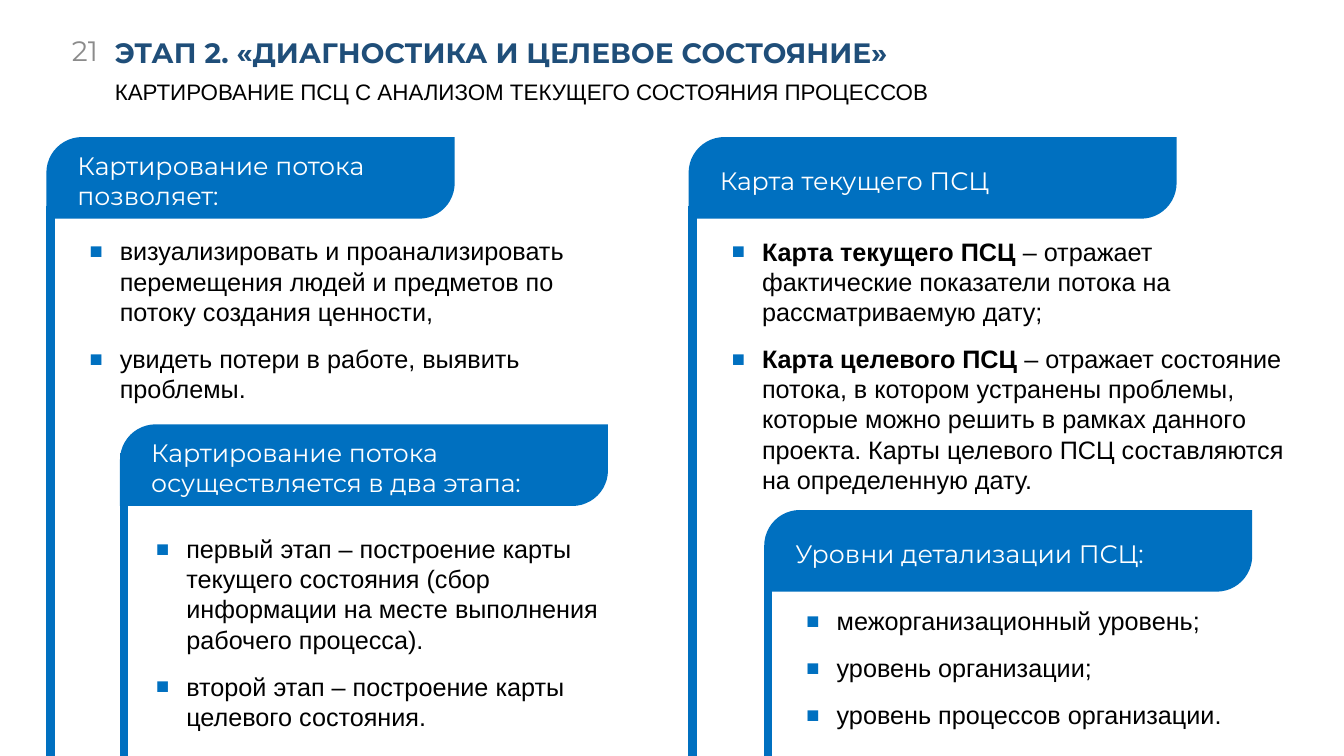
from dataclasses import dataclass

from lxml import etree
from pptx import Presentation
from pptx.dml.color import RGBColor
from pptx.enum.shapes import MSO_CONNECTOR, MSO_SHAPE
from pptx.enum.text import MSO_ANCHOR, PP_ALIGN
from pptx.oxml.ns import qn
from pptx.util import Pt

PX = 9144  # 100 px to the inch
SLIDE_WIDTH, SLIDE_HEIGHT = 1333, 750
STRAIGHT = MSO_CONNECTOR.STRAIGHT
HEADER_SHAPE = MSO_SHAPE.ROUND_2_DIAG_RECTANGLE
TOP, MIDDLE = MSO_ANCHOR.TOP, MSO_ANCHOR.MIDDLE
LEFT, RIGHT = PP_ALIGN.LEFT, PP_ALIGN.RIGHT


@dataclass(frozen=True)
class Theme:
    accent: str = "0070C0"
    title: str = "1F4E79"
    number: str = "8B8B8B"
    body: str = "000000"
    light: str = "FFFFFF"
    heading_font: str = "Montserrat"
    body_font: str = "Arial"
    title_size: int = 20
    subtitle_size: int = 16
    text_size: int = 18
    bullet_gap: int = 12
    bullet_indent: int = 31
    rail_width: int = 6


THEME = Theme()


def px(*lengths):
    return [length * PX for length in lengths]


def add_run(paragraph, text, size, font, color, bold=False):
    run = paragraph.add_run()
    run.text = text
    run.font.size = Pt(size)
    run.font.name = font
    run.font.bold = bold
    run.font.color.rgb = RGBColor.from_string(color)


def add_frame(slide, box, anchor=TOP):
    frame = slide.shapes.add_textbox(*px(*box)).text_frame
    frame.word_wrap = True
    frame.vertical_anchor = anchor
    return frame


def add_label(slide, box, text, size, font, color, bold=False, anchor=MIDDLE, align=LEFT):
    paragraph = add_frame(slide, box, anchor).paragraphs[0]
    paragraph.alignment = align
    add_run(paragraph, text, size, font, color, bold)


def set_bullet(paragraph):
    properties = paragraph._p.get_or_add_pPr()
    indent = THEME.bullet_indent * PX
    properties.set("marL", str(indent))
    properties.set("indent", str(-indent))
    color = etree.SubElement(properties, qn("a:buClr"))
    etree.SubElement(color, qn("a:srgbClr")).set("val", THEME.accent)
    etree.SubElement(properties, qn("a:buSzPct")).set("val", "170000")
    etree.SubElement(properties, qn("a:buFont")).set("typeface", THEME.body_font)
    etree.SubElement(properties, qn("a:buChar")).set("char", "▪")


def add_bullets(slide, box, items):
    """Each item is a pair: bold lead, plain text."""
    frame = add_frame(slide, box)
    for index, (lead, text) in enumerate(items):
        paragraph = frame.add_paragraph() if index else frame.paragraphs[0]
        set_bullet(paragraph)
        if index:
            paragraph.space_before = Pt(THEME.bullet_gap)
        if lead:
            add_run(paragraph, lead, THEME.text_size, THEME.body_font, THEME.body, True)
        add_run(paragraph, text, THEME.text_size, THEME.body_font, THEME.body)


def add_title(slide, left, top):
    # Slide number, title and subtitle
    add_label(slide, (left, top - 2, 107, 54), "21", THEME.title_size,
              THEME.heading_font, THEME.number, align=RIGHT)
    add_label(slide, (left + 104, top, 1104, 54), "ЭТАП 2. «ДИАГНОСТИКА И ЦЕЛЕВОЕ СОСТОЯНИЕ»",
              THEME.title_size, THEME.heading_font, THEME.title, bold=True)
    add_label(slide, (left + 104, top + 48, 851, 37),
              "КАРТИРОВАНИЕ ПСЦ С АНАЛИЗОМ ТЕКУЩЕГО СОСТОЯНИЯ ПРОЦЕССОВ",
              THEME.subtitle_size, THEME.body_font, THEME.body, anchor=TOP)


def add_section(slide, left, top, header_width, heading, list_box, items, rail_drop):
    """list_box is (left, top, width, height), offset from the section corner."""
    # Header
    header = slide.shapes.add_shape(HEADER_SHAPE, *px(left, top, header_width, 81))
    header.adjustments[0] = 0.437
    header.adjustments[1] = 0
    header.shadow.inherit = False
    header.fill.solid()
    header.fill.fore_color.rgb = RGBColor.from_string(THEME.accent)
    header.line.fill.background()
    add_label(slide, (left + 21, top + 16, 438, 54), heading, THEME.text_size,
              THEME.heading_font, THEME.light)

    # Rail down to the slide's bottom edge
    rail_left = left + 4
    rail = slide.shapes.add_connector(
        STRAIGHT, *px(rail_left, top + rail_drop, rail_left, SLIDE_HEIGHT))
    rail.line.color.rgb = RGBColor.from_string(THEME.accent)
    rail.line.width = Pt(THEME.rail_width)
    etree.SubElement(rail._element.spPr, qn("a:effectLst"))

    # Bullets
    list_left, list_top, width, height = list_box
    add_bullets(slide, (left + list_left, top + list_top, width, height), items)


def main():
    presentation = Presentation()
    presentation.slide_width, presentation.slide_height = px(SLIDE_WIDTH, SLIDE_HEIGHT)
    slide = presentation.slides.add_slide(presentation.slide_layouts[6])

    add_title(slide, 0, 25)

    # Left column
    add_section(slide, 46, 136, 405, "Картирование потока позволяет:", (32, 93, 536, 154), [
        ("", "визуализировать и проанализировать перемещения людей и предметов "
             "по потоку создания ценности,"),
        ("", "увидеть потери в работе, выявить проблемы."),
    ], 68)
    add_section(slide, 119, 421, 484, "Картирование потока осуществляется в два этапа:",
                (25, 103, 470, 214), [
        ("", "первый этап – построение карты текущего состояния "
             "(сбор информации на месте выполнения рабочего процесса)."),
        ("", "второй этап – построение карты целевого состояния."),
    ], 28)

    # Right column
    add_section(slide, 683, 136, 484, "Карта текущего ПСЦ", (32, 93, 579, 208), [
        ("Карта текущего ПСЦ ", "– отражает фактические показатели потока "
                                "на рассматриваемую дату;"),
        ("Карта целевого ПСЦ ", "– отражает состояние потока, в котором устранены проблемы, "
                                "которые можно решить в рамках данного проекта. "
                                "Карты целевого ПСЦ составляются на определенную дату."),
    ], 68)
    add_section(slide, 758, 506, 484, "Уровни детализации ПСЦ:", (31, 90, 505, 154), [
        ("", "межорганизационный уровень;"),
        ("", "уровень организации;"),
        ("", "уровень процессов организации."),
    ], 40)

    presentation.save("out.pptx")


if __name__ == "__main__":
    main()
